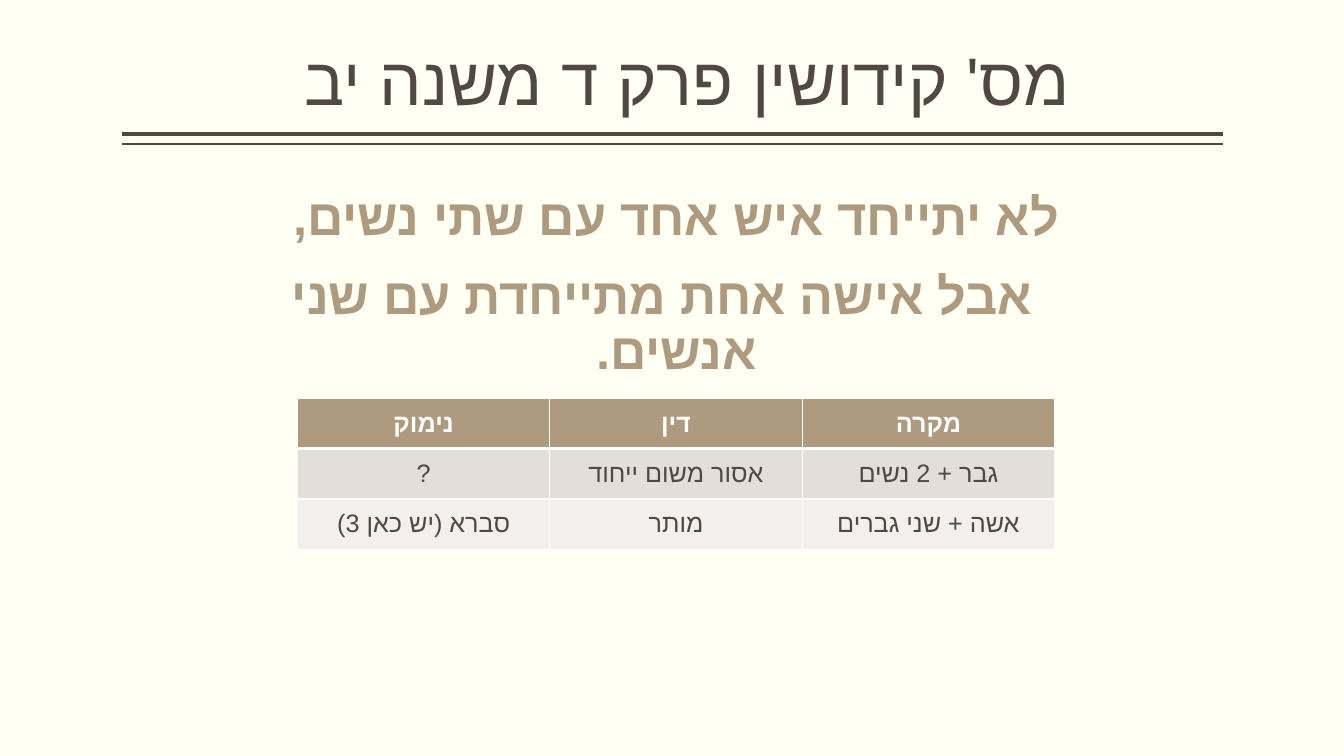
from lxml.etree import SubElement
from pptx import Presentation
from pptx.dml.color import RGBColor
from pptx.enum.shapes import MSO_CONNECTOR as Connector
from pptx.enum.text import MSO_ANCHOR as Anchor, MSO_AUTO_SIZE as AutoSize, PP_ALIGN as Align
from pptx.oxml.ns import qn
from pptx.util import Inches, Pt

TITLE = "מס' קידושין פרק ד משנה יב"
MISHNAH = [
    "לא יתייחד איש אחד עם שתי נשים, ",
    " אבל אישה אחת מתייחדת עם שני אנשים.\u00a0",
]
RULINGS = [
    ("נימוק", "דין", "מקרה"),
    ("?", "אסור משום ייחוד", "גבר + 2 נשים"),
    ("סברא (יש כאן 3)", "מותר", "אשה + שני גברים"),
]
THEME = {
    "font": "Arial",
    "paper": "FFFFF3", "ink": "514843", "accent": "AE9A7E", "white": "FFFFFF",
    "bands": ("E3DED8", "F2EFEC"),
    "title": 48, "body": 36, "table": 18,
}
TITLE_BOX = (1.36, 0.04, 10.92, 1.2)
BODY_BOX = (1.97, 1.85, 9.34, 2.93)
TABLE_BOX = (2.95, 3.95, 7.51, 1.5)
RULE_LEFT, RULE_RIGHT = 1.21, 12.13
RULES = [(1.33, 3), (1.43, 1)]  # height on the slide, line width
FRAME_FORMAT = {
    "margin_left": 0, "margin_right": 0,
    "margin_top": Inches(0.05), "margin_bottom": Inches(0.05),
    "word_wrap": True, "auto_size": AutoSize.NONE,
}


def colour(name):
    return RGBColor.from_string(THEME.get(name, name))


def set_all(target, values):
    for name, value in values.items():
        setattr(target, name, value)


def write_hebrew(paragraph, wording, size, ink, bold=False):
    """Fill a paragraph with centred right-to-left text in the theme font."""
    paragraph.alignment = Align.CENTER
    paragraph._p.get_or_add_pPr().set("rtl", "1")
    run = paragraph.add_run()
    run.text = wording
    set_all(run.font, {"name": THEME["font"], "size": Pt(THEME[size]), "bold": bold})
    run.font.color.rgb = colour(ink)
    SubElement(run._r.get_or_add_rPr(), qn("a:cs"), typeface=THEME["font"])


def fill_placeholder(holder, box, lines, size, ink, anchor, bold, before):
    set_all(holder, dict(zip(("left", "top", "width", "height"), map(Inches, box))))
    frame = holder.text_frame
    set_all(frame, {**FRAME_FORMAT, "vertical_anchor": anchor})
    for index, line in enumerate(lines):
        paragraph = frame.add_paragraph() if index else frame.paragraphs[0]
        write_hebrew(paragraph, line, size, ink, bold)
        set_all(paragraph, {"line_spacing": 0.9, "space_before": Pt(before)})
        properties = paragraph._p.get_or_add_pPr()
        properties.set("marL", "0")
        properties.set("indent", "0")
        SubElement(properties, qn("a:buNone"))


def add_rule(slide, height, width):
    rule = slide.shapes.add_connector(
        Connector.STRAIGHT, Inches(RULE_RIGHT), Inches(height), Inches(RULE_LEFT), Inches(height))
    rule.line.color.rgb = colour("ink")
    rule.line.width = Pt(width)
    SubElement(rule._element.spPr, qn("a:effectLst"))


def add_borders(cell, widths):
    for side, width in widths.items():
        border = SubElement(cell._tc.get_or_add_tcPr(), qn(f"a:ln{side}"), w=str(Pt(width)))
        fill = SubElement(border, qn("a:solidFill"))
        SubElement(fill, qn("a:srgbClr"), val=THEME["white"])


def add_rulings(slide):
    table = slide.shapes.add_table(
        len(RULINGS), len(RULINGS[0]), *map(Inches, TABLE_BOX)).table
    for row, wordings in enumerate(RULINGS):
        header = row == 0
        for column, wording in enumerate(wordings):
            cell = table.cell(row, column)
            add_borders(cell, {"L": 1, "R": 1, "T": 3 if row == 1 else 1, "B": 3 if header else 1})
            cell.fill.solid()
            cell.fill.fore_color.rgb = colour("accent" if header else THEME["bands"][row - 1])
            cell.vertical_anchor = Anchor.MIDDLE
            write_hebrew(cell.text_frame.paragraphs[0], wording, "table",
                         "white" if header else "ink", header)


def main():
    deck = Presentation()
    set_all(deck, {"slide_width": Inches(13.33), "slide_height": Inches(7.5)})
    slide = deck.slides.add_slide(deck.slide_layouts[1])
    slide.background.fill.solid()
    slide.background.fill.fore_color.rgb = colour("paper")
    for height, width in RULES:
        add_rule(slide, height, width)
    title, body = slide.placeholders
    fill_placeholder(title, TITLE_BOX, [TITLE], "title", "ink", Anchor.BOTTOM, False, 0)
    fill_placeholder(body, BODY_BOX, MISHNAH, "body", "accent", Anchor.TOP, True, 18)
    add_rulings(slide)
    deck.save("out.pptx")


if __name__ == "__main__":
    main()
